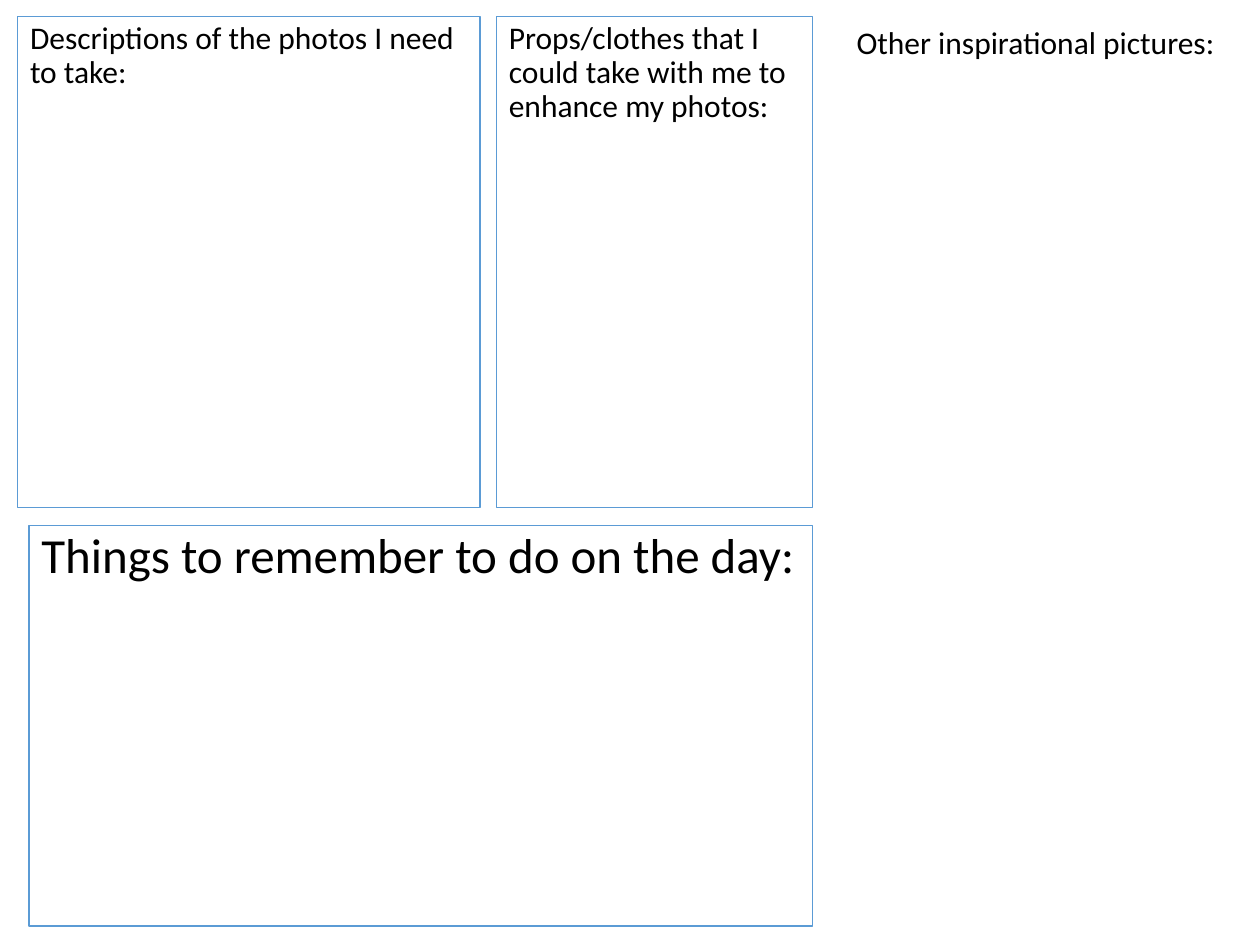
import pptx
import pptx.util
import pptx.dml.color
import pptx.enum.shapes
import pptx.enum.text

COLORS = {"border": "5B9BD5", "text": "000000"}

# Slide
deck = pptx.Presentation()
deck.slide_width = pptx.util.Inches(10)
deck.slide_height = pptx.util.Inches(7.5)
slide = deck.slides.add_slide(deck.slide_layouts[6])

# Planning grid in inches: shared top row, right edge of the panels
top, row_height = 0.13, 3.9
panel_right = 6.45
props_left, reminders_left, reminders_top = 3.94, 0.23, 4.17


def write(frame, wording, size):
    frame.text = wording
    frame.vertical_anchor = pptx.enum.text.MSO_ANCHOR.TOP
    paragraph = frame.paragraphs[0]
    paragraph.alignment = pptx.enum.text.PP_ALIGN.LEFT
    font = paragraph.runs[0].font
    font.name = "Calibri"
    font.size = pptx.util.Pt(size)
    font.color.rgb = pptx.dml.color.RGBColor.from_string(COLORS["text"])
    return paragraph


# Bordered writing panels: left, top, width, height, size, heading
panels = [
    (reminders_left, reminders_top, panel_right - reminders_left, 3.18, 28,
     "Things to remember to do on the day:"),
    (0.14, top, 3.67, row_height, 18,
     "Descriptions of the photos I need to take:"),
    (props_left, top, panel_right - props_left, row_height, 18,
     "Props/clothes that I could take with me to enhance my photos:"),
]
for *bounds, size, heading in panels:
    panel = slide.shapes.add_shape(
        pptx.enum.shapes.MSO_SHAPE.RECTANGLE,
        *[pptx.util.Inches(length) for length in bounds])
    panel.shadow.inherit = False
    panel.fill.background()
    panel.line.color.rgb = pptx.dml.color.RGBColor.from_string(COLORS["border"])
    panel.line.width = pptx.util.Pt(0.75)
    panel.text_frame.word_wrap = True
    write(panel.text_frame, heading, size).line_spacing = 0.9

# Heading above the open space for pictures
inspiration = slide.shapes.add_textbox(
    *[pptx.util.Inches(length) for length in (6.7, top, 3.08, 0.4)])
inspiration.text_frame.word_wrap = False
inspiration.text_frame.auto_size = pptx.enum.text.MSO_AUTO_SIZE.SHAPE_TO_FIT_TEXT
write(inspiration.text_frame, "Other inspirational pictures:", 18)

deck.save("out.pptx")
